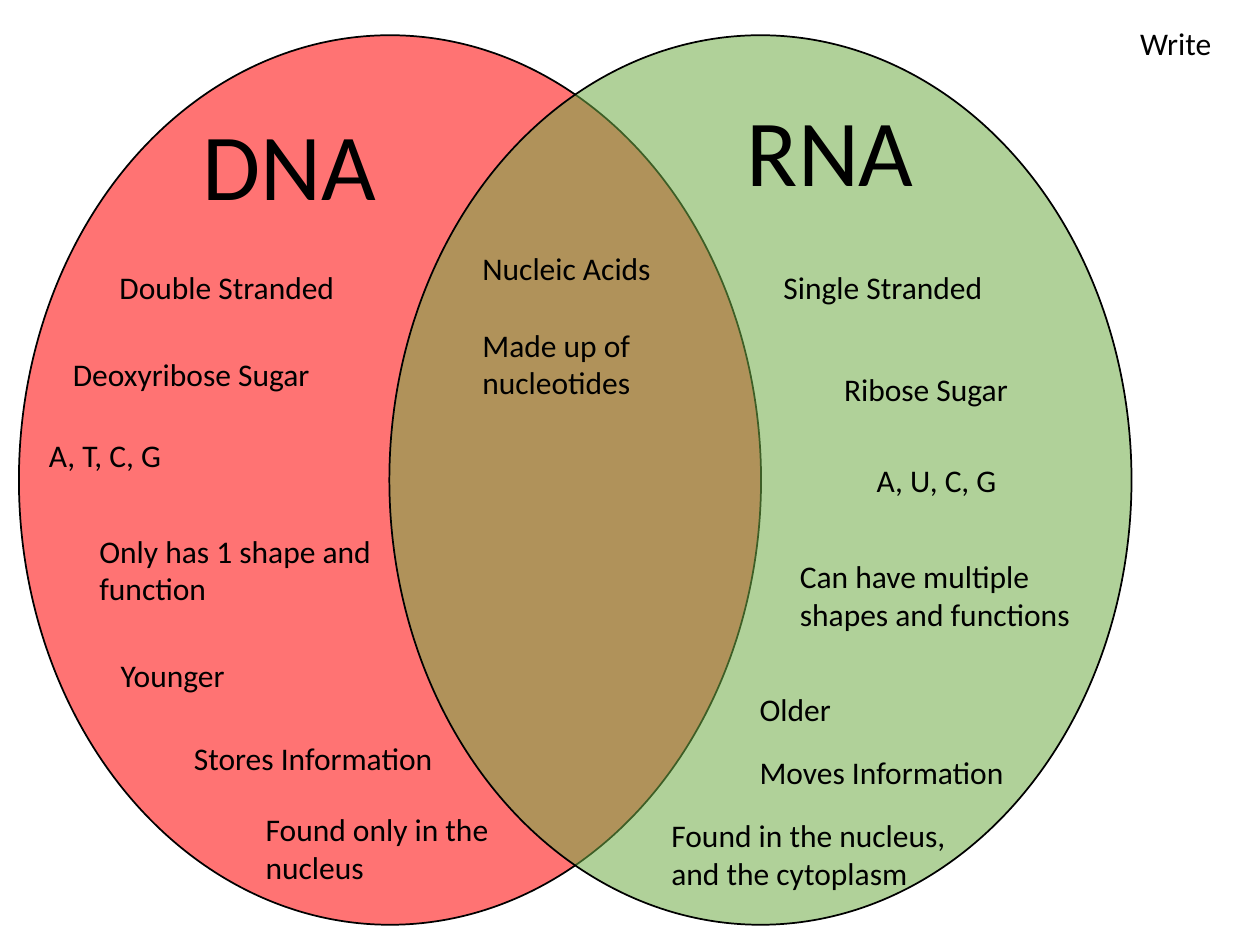
from lxml import etree
from pptx import Presentation
from pptx.dml.color import RGBColor
from pptx.enum.shapes import MSO_SHAPE
from pptx.enum.text import MSO_AUTO_SIZE, PP_ALIGN
from pptx.oxml.ns import qn
from pptx.util import Inches, Pt

OVAL = MSO_SHAPE.OVAL
GROW = MSO_AUTO_SIZE.SHAPE_TO_FIT_TEXT
LEFT, CENTER = PP_ALIGN.LEFT, PP_ALIGN.CENTER

BLACK = RGBColor(0x00, 0x00, 0x00)
RED = RGBColor(0xFF, 0x00, 0x00)
GREEN = RGBColor(0x70, 0xAD, 0x47)

TOP, WIDE, HIGH = 0.28, 5.89, 7.06
DNA_BOX = (0.15, TOP, WIDE, HIGH)
RNA_BOX = (3.09, TOP, WIDE, HIGH)
SHARED_BOX = (3.09, TOP, 2.95, HIGH)

NOTE = {"size": Pt(18), "name": "Calibri"}
TITLE = {"size": Pt(54), "name": "Calibri"}
ONE, TWO = 0.4, 0.71  # heights of notes with one and two lines

# Places are measured from the top left corner of the circle's box.
DNA_TITLE = ("DNA", 1.35, 0.51, 1.6)
DNA_NOTES = [
    ("Double Stranded", 0.70, 1.80, 2.04, ONE),
    ("Deoxyribose Sugar", 0.33, 2.49, 2.41, ONE),
    ("A, T, C, G", 0.14, 3.13, 2.41, ONE),
    ("Only has 1 shape and function", 0.54, 3.89, 2.41, TWO),
    ("Younger", 0.71, 4.88, 2.41, ONE),
    ("Stores Information", 1.29, 5.54, 2.41, ONE),
    ("Found only in the nucleus", 1.86, 6.10, 2.41, TWO),
]
RNA_TITLE = ("RNA", 2.73, 0.40, 1.54)
RNA_NOTES = [
    ("Single Stranded", 3.03, 1.80, 2.04, ONE),
    ("Ribose Sugar", 3.51, 2.61, 2.41, ONE),
    ("A, U, C, G", 3.77, 3.33, 2.41, ONE),
    ("Can have multiple shapes and functions", 3.16, 4.09, 2.59, TWO),
    ("Older", 2.84, 5.15, 2.41, ONE),
    ("Moves Information", 2.84, 5.65, 2.41, ONE),
    ("Found in the nucleus, and the cytoplasm", 2.14, 6.15, 2.41, TWO),
]
SHARED = ["Nucleic Acids", "Made up of nucleotides"]


def add_text(slide, box, lines, font=NOTE, align=LEFT, wrap=True):
    frame = slide.shapes.add_textbox(*map(Inches, box)).text_frame
    frame.word_wrap = wrap
    frame.auto_size = GROW
    for i, line in enumerate(lines):
        para = frame.add_paragraph() if i else frame.paragraphs[0]
        para.alignment = align
        if i:
            para.space_before = Pt(22)
        run = para.add_run()
        run.text = line
        run.font.color.rgb = BLACK
        for key, value in font.items():
            setattr(run.font, key, value)


def add_circle(slide, box, color):
    """Draw an outlined ellipse that lets what lies behind it show through."""
    oval = slide.shapes.add_shape(OVAL, *map(Inches, box))
    oval.shadow.inherit = False
    oval.fill.solid()
    oval.fill.fore_color.rgb = color
    tint = oval.fill._xPr.find(qn("a:solidFill"))[0]
    etree.SubElement(tint, qn("a:alpha")).set("val", "55000")
    oval.line.color.rgb = BLACK
    oval.line.width = Pt(1)


def add_side(slide, box, title, notes):
    """Place the title and notes of one circle."""
    left, top = box[:2]
    name, x, y, wide = title
    add_text(slide, (left + x, top + y, wide, 1.01), [name], TITLE, CENTER, False)
    for text, x, y, wide, high in notes:
        add_text(slide, (left + x, top + y, wide, high), [text])


def add_shared(slide, box):
    """Place what both circles have in common."""
    left, top = box[:2]
    add_text(slide, (left + 0.64, top + 1.65, 2.41, 1.92), SHARED)


def main():
    deck = Presentation()
    deck.slide_width, deck.slide_height = Inches(10), Inches(7.5)
    slide = deck.slides.add_slide(deck.slide_layouts[6])
    add_circle(slide, DNA_BOX, RED)
    add_circle(slide, RNA_BOX, GREEN)
    add_side(slide, DNA_BOX, DNA_TITLE, DNA_NOTES)
    add_side(slide, RNA_BOX, RNA_TITLE, RNA_NOTES)
    add_shared(slide, SHARED_BOX)
    add_text(slide, (8.95, 0.14, 0.91, ONE), ["Write"])
    deck.save("out.pptx")


if __name__ == "__main__":
    main()
